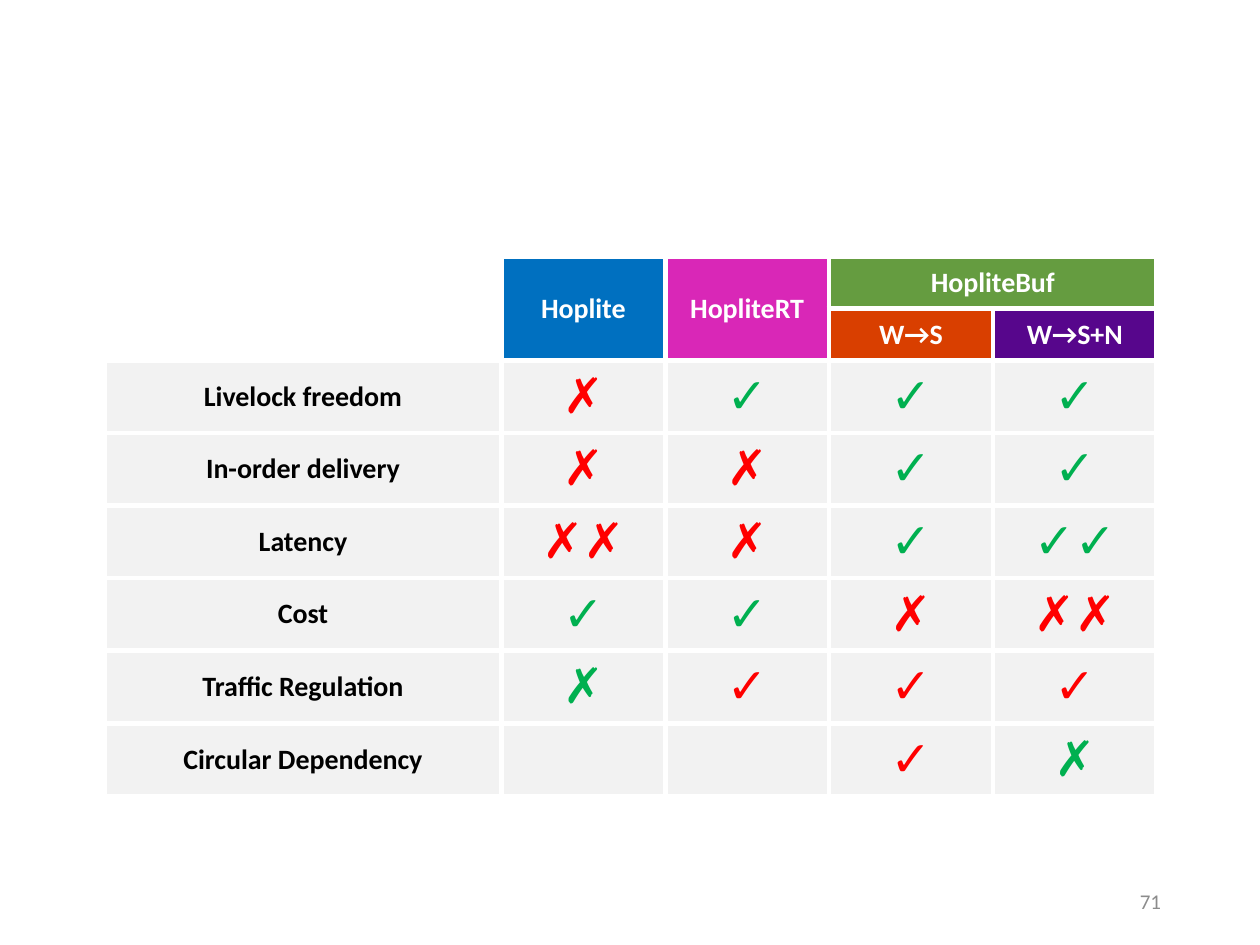
from dataclasses import dataclass

from lxml.etree import SubElement
from pptx import Presentation
from pptx.dml.color import RGBColor
from pptx.enum.text import MSO_ANCHOR, PP_ALIGN
from pptx.oxml.ns import qn
from pptx.util import Pt


@dataclass(frozen=True)
class Theme:
    font: str = "Calibri"
    white: str = "FFFFFF"
    black: str = "000000"
    grey: str = "8C8C8C"
    body: str = "F2F2F2"
    good: str = "00B050"
    bad: str = "FF0000"
    hoplite: str = "0070C0"
    hoplite_rt: str = "D927B7"
    hoplite_buf: str = "659C40"
    west_south: str = "D93F00"
    west_south_north: str = "57068C"
    label_size: int = 16
    mark_size: int = 28
    number_size: int = 12


theme = Theme()


def write(tf, text, size, color, align=PP_ALIGN.CENTER, bold=True):
    p = tf.paragraphs[0]
    p.text = text
    p.alignment = align
    p.font.name = theme.font
    p.font.size = Pt(size)
    p.font.bold = bold
    p.font.color.rgb = RGBColor.from_string(color)


def style_cell(cell, fill=None):
    """Give the cell white 3 pt borders, centred text and a fill, or none."""
    cell.vertical_anchor = MSO_ANCHOR.MIDDLE
    tc_pr = cell._tc.get_or_add_tcPr()
    for side in ("a:lnL", "a:lnR", "a:lnT", "a:lnB"):
        ln = SubElement(tc_pr, qn(side), w=str(Pt(3)))
        SubElement(SubElement(ln, qn("a:solidFill")), qn("a:srgbClr"), val=theme.white)
    if fill:
        cell.fill.solid()
        cell.fill.fore_color.rgb = RGBColor.from_string(fill)
    else:
        cell.fill.background()


prs = Presentation()
prs.slide_width, prs.slide_height = Pt(720), Pt(540)
s = prs.slides.add_slide(prs.slide_layouts[6])

# Each row: label, whether a tick is good, marks per column
criteria = [
    ("Livelock freedom", True, ["✗", "✓", "✓", "✓"]),
    ("In-order delivery", True, ["✗", "✗", "✓", "✓"]),
    ("Latency", True, ["✗✗", "✗", "✓", "✓✓"]),
    ("Cost", True, ["✓", "✓", "✗", "✗✗"]),
    ("Traffic Regulation", False, ["✗", "✓", "✓", "✓"]),
    ("Circular Dependency", False, ["", "", "✓", "✗"]),
]
# Each header: row, column, last row, last column, text, fill
headers = [
    (0, 0, 1, 0, "", None),
    (0, 1, 1, 1, "Hoplite", theme.hoplite),
    (0, 2, 1, 2, "HopliteRT", theme.hoplite_rt),
    (0, 3, 0, 4, "HopliteBuf", theme.hoplite_buf),
    (1, 3, 1, 3, "W→S", theme.west_south),
    (1, 4, 1, 4, "W→S+N", theme.west_south_north),
]
col_widths = [226.8] + [93.6] * 4
row_heights = [29.5] * 2 + [41.5] * len(criteria)

table = s.shapes.add_table(
    len(row_heights), len(col_widths), Pt(59.75), Pt(146.9),
    Pt(sum(col_widths)), Pt(sum(row_heights)),
).table
table.first_row = table.horz_banding = False
for column, width in zip(table.columns, col_widths):
    column.width = Pt(width)
for row, height in zip(table.rows, row_heights):
    row.height = Pt(height)

for top, left, bottom, right, text, fill in headers:
    for r in range(top, bottom + 1):
        for c in range(left, right + 1):
            style_cell(table.cell(r, c), fill)
    cell = table.cell(top, left)
    if (top, left) != (bottom, right):
        cell.merge(table.cell(bottom, right))
    write(cell.text_frame, text, theme.label_size, theme.white)

for r, (label, tick_is_good, marks) in enumerate(criteria, start=2):
    cell = table.cell(r, 0)
    style_cell(cell, theme.body)
    write(cell.text_frame, label, theme.label_size, theme.black)
    for c, mark in enumerate(marks, start=1):
        cell = table.cell(r, c)
        style_cell(cell, theme.body)
        color = theme.good if ("✓" in mark) == tick_is_good else theme.bad
        write(cell.text_frame, mark, theme.mark_size, color)

# Slide number
tf = s.shapes.add_textbox(Pt(508.5), Pt(500.5), Pt(162), Pt(28.75)).text_frame
tf.word_wrap = True
tf.vertical_anchor = MSO_ANCHOR.MIDDLE
write(tf, "71", theme.number_size, theme.grey, PP_ALIGN.RIGHT, bold=False)

prs.save("out.pptx")
